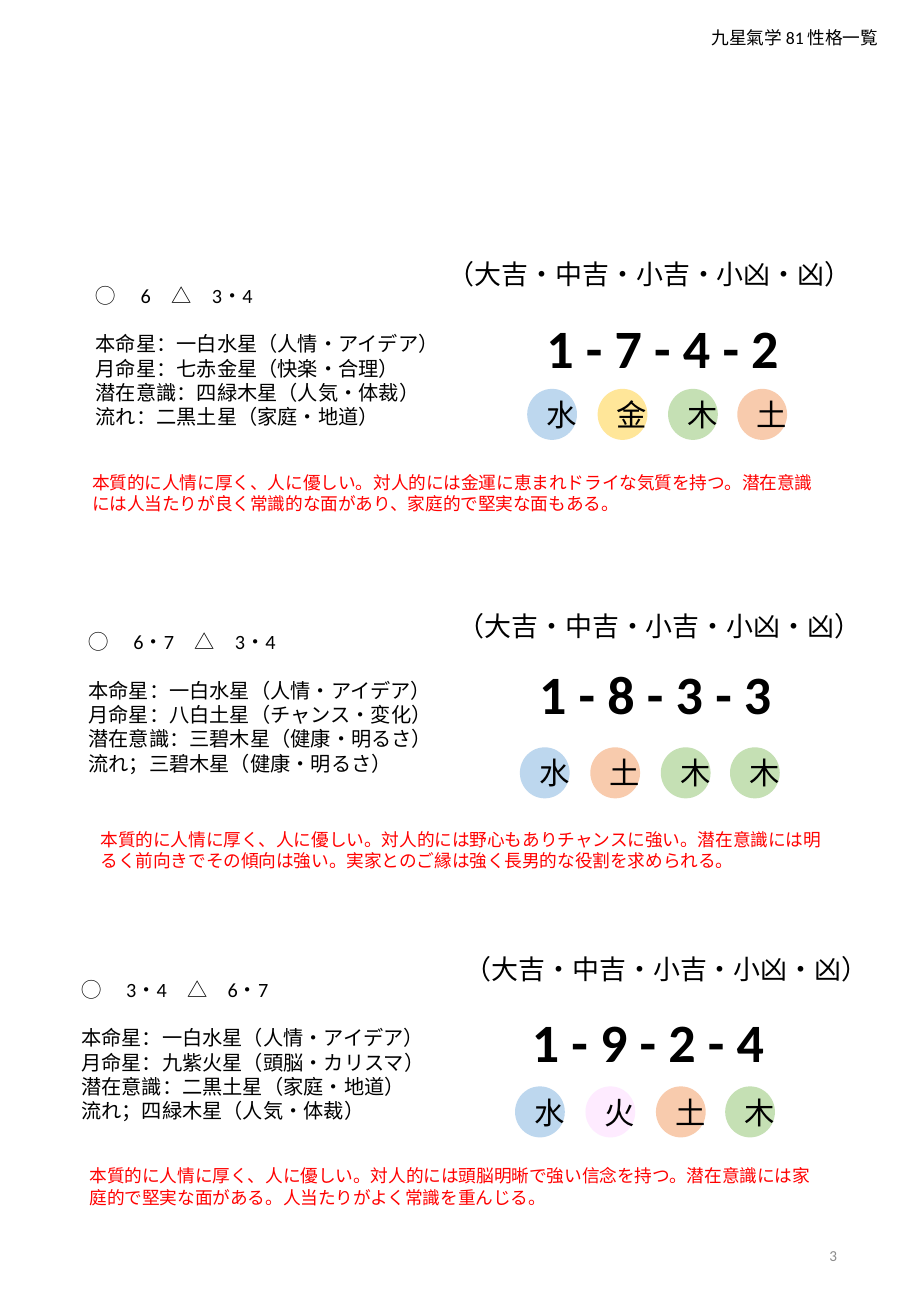
from pptx import Presentation
from pptx.dml.color import RGBColor
from pptx.enum import shapes, text
from pptx.util import Inches, Pt

FILLS = {"水": "BDD7EE", "金": "FFE699", "木": "C5E0B4",
         "土": "F8CBAD", "火": "FEEBFF"}
LUCK = "（大吉・中吉・小吉・小凶・凶）"
STEPS = (0, 0.58, 1.16, 1.73)  # left of each circle within its row

# Each reading: box corner, then its parts relative to that corner
READINGS = [
    dict(at=(0.69, 2.28), luck=(2.9, -0.21), row=(3.65, 0.92), note=(-0.03, 1.55),
         nums="1 - 7 - 4 - 2", signs="水金木土",
         lines=["◯　 6　△　3・4",
                "本命星：一白水星（人情・アイデア）",
                "月命星：七赤金星（快楽・合理）",
                "潜在意識：四緑木星（人気・体裁）",
                "流れ：二黒土星（家庭・地道）"],
         body="本質的に人情に厚く、人に優しい。対人的には金運に恵まれドライな気質を持つ。"
              "潜在意識には人当たりが良く常識的な面があり、家庭的で堅実な面もある。"),
    dict(at=(0.63, 5.13), luck=(3.04, -0.16), row=(3.65, 1.02), note=(0.1, 1.64),
         nums="1 - 8 - 3 - 3", signs="水土木木",
         lines=["◯　 6・7　△　3・4",
                "本命星：一白水星（人情・アイデア）",
                "月命星：八白土星（チャンス・変化）",
                "潜在意識：三碧木星（健康・明るさ）",
                "流れ；三碧木星（健康・明るさ）"],
         body="本質的に人情に厚く、人に優しい。対人的には野心もありチャンスに強い。"
              "潜在意識には明るく前向きでその傾向は強い。"
              "実家とのご縁は強く長男的な役割を求められる。"),
    dict(at=(0.57, 7.99), luck=(3.16, -0.2), row=(3.67, 0.95), note=(0.07, 1.55),
         nums="1 - 9 - 2 - 4", signs="水火土木",
         lines=["◯　 3・4　△　6・7",
                "本命星：一白水星（人情・アイデア）",
                "月命星：九紫火星（頭脳・カリスマ）",
                "潜在意識：二黒土星（家庭・地道）",
                "流れ；四緑木星（人気・体裁）"],
         body="本質的に人情に厚く、人に優しい。対人的には頭脳明晰で強い信念を持つ。"
              "潜在意識には家庭的で堅実な面がある。人当たりがよく常識を重んじる。"),
]


def color(code):
    return RGBColor.from_string(code)


def write(frame, lines, size, ink="000000", bold=False, align=text.PP_ALIGN.LEFT):
    frame.word_wrap = True
    frame.text = "\n".join(lines)
    for para in frame.paragraphs:
        para.alignment = align
        for run in para.runs:
            run.font.name = "Calibri"
            run.font.size = Pt(size)
            run.font.bold = bold
            run.font.color.rgb = color(ink)


def label(slide, x, y, w, h, lines, size, **style):
    box = slide.shapes.add_textbox(Inches(x), Inches(y), Inches(w), Inches(h))
    write(box.text_frame, lines, size, **style)
    return box.text_frame


def circle(slide, x, y, sign):
    disc = slide.shapes.add_shape(shapes.MSO_SHAPE.OVAL, Inches(x), Inches(y),
                                  Inches(0.41), Inches(0.42))
    disc.shadow.inherit = False
    disc.fill.solid()
    disc.fill.fore_color.rgb = color(FILLS[sign])
    disc.line.fill.background()
    disc.text_frame.vertical_anchor = text.MSO_ANCHOR.MIDDLE
    write(disc.text_frame, [sign], 18, align=text.PP_ALIGN.CENTER)


def reading(slide, item):
    x, y = item["at"]

    def place(key):
        dx, dy = item[key]
        return x + dx, y + dy

    # Star list, with a gap of one line below its first row
    stars = label(slide, x, y, 3.46, 1.31, item["lines"], 12)
    stars.paragraphs[1].space_before = Pt(14.4)

    # Numbers and their elements
    label(slide, x + 3.71, y + 0.26, 2.52, 0.64, [item["nums"]], 32, bold=True)
    left, top = place("row")
    for step, sign in zip(STEPS, item["signs"]):
        circle(slide, left + step, top, sign)

    # Character note and luck scale
    label(slide, *place("note"), 6.26, 0.45, [item["body"]], 10.5, ink="FF0000")
    label(slide, *place("luck"), 3.57, 0.37, [LUCK], 16)


def main():
    deck = Presentation()
    deck.slide_width, deck.slide_height = Inches(7.5), Inches(10.83)
    slide = deck.slides.add_slide(deck.slide_layouts[6])

    # Page header and number
    label(slide, 5.76, 0.17, 1.6, 0.28, ["九星氣学 81 性格一覧"], 10.5)
    page = label(slide, 5.3, 10.04, 1.69, 0.58, ["3"], 9, ink="8C8C8C",
                 align=text.PP_ALIGN.RIGHT)
    page.vertical_anchor = text.MSO_ANCHOR.MIDDLE

    for item in READINGS:
        reading(slide, item)
    deck.save("out.pptx")


if __name__ == "__main__":
    main()
